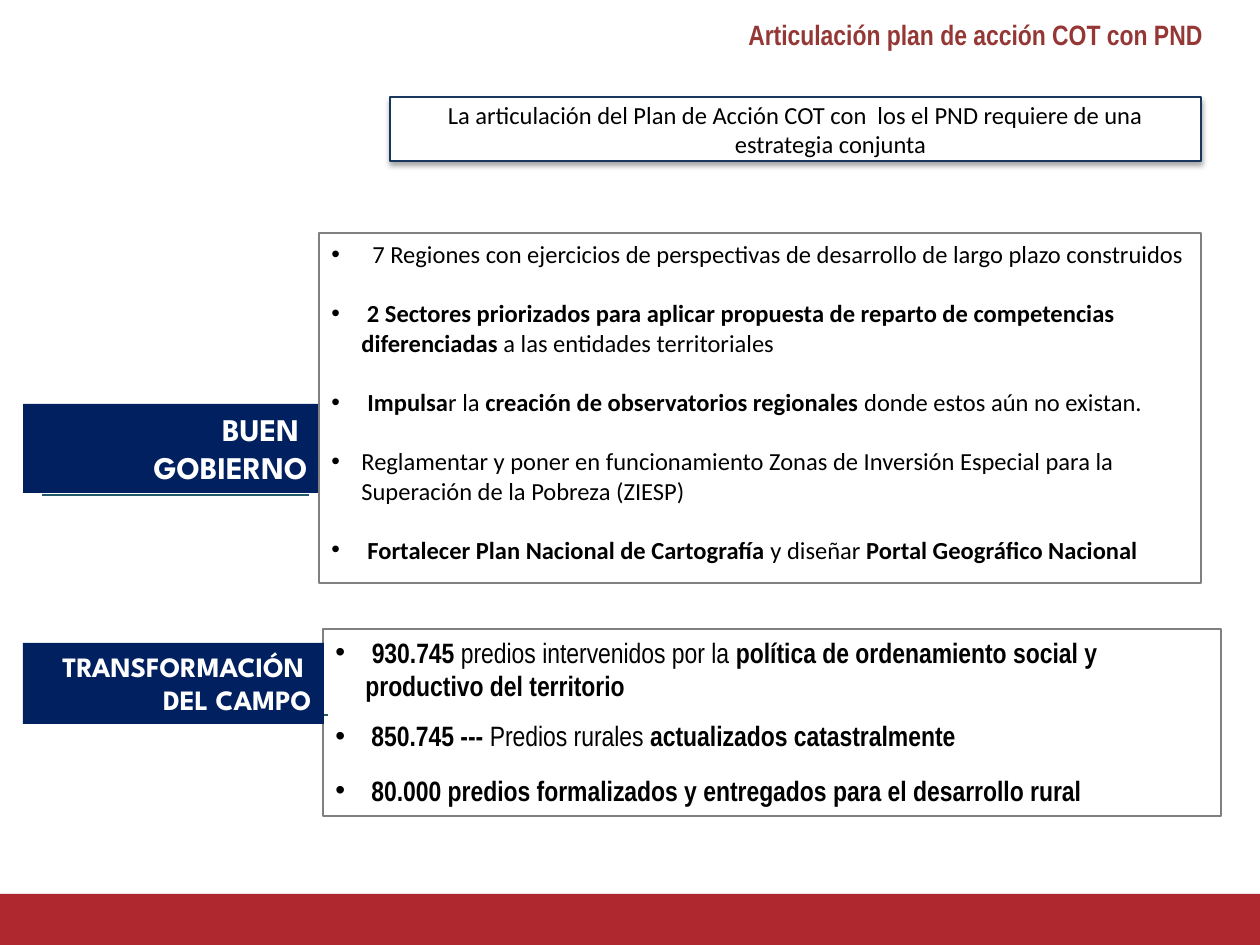
from dataclasses import dataclass

from lxml.etree import SubElement
from pptx import Presentation
from pptx.dml.color import RGBColor
from pptx.enum.shapes import MSO_CONNECTOR, MSO_SHAPE
from pptx.enum.text import MSO_ANCHOR, PP_ALIGN
from pptx.oxml.ns import qn
from pptx.util import Pt

SCALE = 914400 / 126  # EMU per px


def px(length):
    return round(length * SCALE)


@dataclass(frozen=True)
class Theme:
    red: str = "AF272F"
    title_red: str = "953735"
    navy: str = "002060"
    heading_line: str = "17375E"
    teal: str = "215968"
    gray: str = "808080"
    white: str = "FFFFFF"
    black: str = "000000"
    body: str = "Calibri"
    narrow: str = "Arial Narrow"
    display: str = "League Spartan"
    small: int = 14
    medium: int = 16
    large: int = 18
    hairline: float = 0.75


class SlideBuilder:
    def __init__(self, page, theme):
        self.page = page
        self.theme = theme

    def rectangle(self, bounds, fill=None, line=None, shadow=None):
        box = self.page.shapes.add_shape(MSO_SHAPE.RECTANGLE, *map(px, bounds))
        box.shadow.inherit = False
        if fill:
            box.fill.solid()
            box.fill.fore_color.rgb = RGBColor.from_string(fill)
        else:
            box.fill.background()
        if line:
            box.line.color.rgb = RGBColor.from_string(line)
            box.line.width = Pt(self.theme.hairline)
        else:
            box.line.fill.background()
        if shadow:
            effects = box._element.spPr.find(qn("a:effectLst"))
            outer = SubElement(effects, qn("a:outerShdw"), blurRad=str(Pt(3.1)),
                               dist=str(Pt(1.8)), dir="5400000", rotWithShape="0")
            color = SubElement(outer, qn("a:srgbClr"), val=shadow)
            SubElement(color, qn("a:alpha"), val="35000")
        box.text_frame.word_wrap = True
        box.text_frame.vertical_anchor = MSO_ANCHOR.TOP
        return box

    def text_box(self, bounds):
        box = self.page.shapes.add_textbox(*map(px, bounds))
        box.text_frame.word_wrap = True
        return box

    def rule(self, left, right, top):
        line = self.page.shapes.add_connector(
            MSO_CONNECTOR.STRAIGHT, px(left), px(top), px(right), px(top))
        line.line.color.rgb = RGBColor.from_string(self.theme.teal)
        line.line.width = Pt(self.theme.hairline)
        SubElement(line._element.spPr, qn("a:effectLst"))

    def style(self, para, font, size, color, align, bold=None):
        para.alignment = align
        para.font.name = font
        para.font.size = Pt(size)
        para.font.color.rgb = RGBColor.from_string(color)
        if bold is not None:
            para.font.bold = bold

    def paragraphs(self, box, lines, font, size, color, align, bold=False):
        frame = box.text_frame
        for index, line in enumerate(lines):
            para = frame.add_paragraph() if index else frame.paragraphs[0]
            para.add_run().text = line
            self.style(para, font, size, color, align, bold)

    def hang(self, para, indent):
        properties = para._p.get_or_add_pPr()
        properties.set("marL", str(px(indent)))
        properties.set("indent", str(-px(indent)))
        return properties

    def label(self, bounds, lines, size):
        box = self.rectangle(bounds, self.theme.navy)
        self.paragraphs(box, lines, self.theme.display, size,
                        self.theme.white, PP_ALIGN.RIGHT, True)

    def bullets(self, box, items, font, size):
        """Each item holds space before (pt), hanging indent (px) and (text, bold) spans."""
        frame = box.text_frame
        for index, (gap, indent, spans) in enumerate(items):
            para = frame.add_paragraph() if index else frame.paragraphs[0]
            properties = self.hang(para, indent)
            SubElement(properties, qn("a:buFont"), typeface="Arial")
            SubElement(properties, qn("a:buChar"), char="•")
            if gap:
                para.space_before = Pt(gap)
            self.style(para, font, size, self.theme.black, PP_ALIGN.LEFT)
            for text, bold in spans:
                span = para.add_run()
                span.text = text
                span.font.bold = bold


GOVERNMENT = [
    (0, 41, [("7 Regiones con ejercicios de perspectivas de desarrollo de largo plazo "
              "construidos", False)]),
    (17, 30, [(" 2 Sectores priorizados para aplicar propuesta de reparto de competencias "
               "diferenciadas ", True),
              ("a las entidades territoriales", False)]),
    (17, 36, [("Impulsa", True), ("r la ", False),
              ("creación de observatorios regionales ", True),
              ("donde estos aún no existan.", False)]),
    (17, 30, [("Reglamentar y poner en funcionamiento Zonas de Inversión Especial para la "
               "Superación de la Pobreza (ZIESP)", False)]),
    (17, 36, [("Fortalecer Plan Nacional de Cartografía ", True), ("y diseñar ", False),
              ("Portal Geográfico Nacional", True)]),
]
COUNTRYSIDE = [
    (0, 30, [(" 930.745", True), (" predios intervenidos por la ", False),
             ("política de ordenamiento social y productivo del territorio", True)]),
    (9.5, 36, [("850.745 --- ", True), ("Predios rurales ", False),
               ("actualizados catastralmente", True)]),
    (12, 36, [("80.000 predios formalizados y entregados para el desarrollo rural", True)]),
]


def main():
    theme = Theme()
    deck = Presentation()
    deck.slide_width, deck.slide_height = px(1260), px(945)
    builder = SlideBuilder(deck.slides.add_slide(deck.slide_layouts[6]), theme)

    # Footer band
    builder.rectangle((0, 894, 1260, 51), theme.red, shadow=theme.gray)

    # Title and introduction
    title = builder.text_box((653, 11, 562, 47))
    builder.paragraphs(title, ["Articulación plan de acción COT con PND"], theme.narrow,
                       theme.medium, theme.title_red, PP_ALIGN.RIGHT, True)
    intro = builder.rectangle((390, 97, 811, 64), theme.white,
                              theme.heading_line, theme.black)
    intro.text_frame.vertical_anchor = MSO_ANCHOR.MIDDLE
    builder.hang(intro.text_frame.paragraphs[0], 70)
    builder.paragraphs(
        intro, ["La articulación del Plan de Acción COT con  los el PND requiere de una "
                "estrategia conjunta"],
        theme.body, theme.small, theme.black, PP_ALIGN.CENTER)

    # Good government
    builder.rule(42, 309, 495)
    builder.label((23, 404, 297, 89), ["BUEN ", "GOBIERNO"], theme.large)
    government = builder.rectangle((319, 233, 882, 350), theme.white, theme.gray)
    builder.bullets(government, GOVERNMENT, theme.body, theme.small)

    # Transformation of the countryside
    countryside = builder.rectangle((323, 629, 898, 187), line=theme.gray)
    builder.bullets(countryside, COUNTRYSIDE, theme.narrow, theme.medium)
    builder.rule(95, 328, 715)
    builder.label((23, 643, 301, 81), ["TRANSFORMACIÓN ", "DEL CAMPO"], theme.medium)

    deck.save("out.pptx")


if __name__ == "__main__":
    main()
